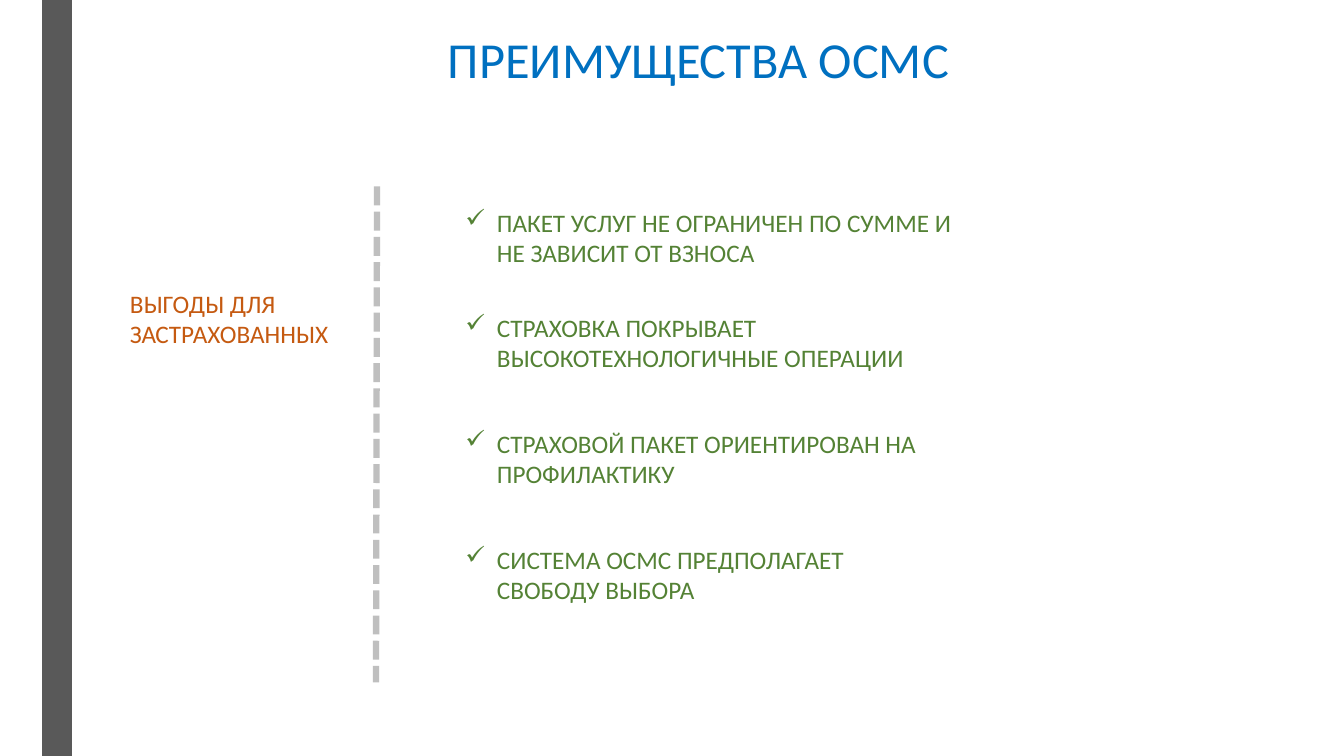
"""Build the slide on the benefits of compulsory health insurance."""
from dataclasses import dataclass

from lxml import etree
from pptx import Presentation
from pptx.dml.color import RGBColor
from pptx.enum.dml import MSO_LINE
from pptx.enum.shapes import MSO_CONNECTOR, MSO_SHAPE
from pptx.enum.text import MSO_ANCHOR, MSO_AUTO_SIZE, PP_ALIGN
from pptx.oxml.ns import qn
from pptx.util import Pt

RECTANGLE = MSO_SHAPE.RECTANGLE
STRAIGHT = MSO_CONNECTOR.STRAIGHT
DASH = MSO_LINE.SQUARE_DOT
TOP = MSO_ANCHOR.TOP
NO_FIT = MSO_AUTO_SIZE.NONE
LEFT, CENTER = PP_ALIGN.LEFT, PP_ALIGN.CENTER
TITLE_ONLY = 5

BENEFITS = [
    (144.7, "ПАКЕТ УСЛУГ НЕ ОГРАНИЧЕН ПО СУММЕ И НЕ ЗАВИСИТ ОТ ВЗНОСА"),
    (219.6, "СТРАХОВКА ПОКРЫВАЕТ ВЫСОКОТЕХНОЛОГИЧНЫЕ ОПЕРАЦИИ"),
    (302.4, "СТРАХОВОЙ ПАКЕТ ОРИЕНТИРОВАН НА ПРОФИЛАКТИКУ"),
    (385.2, "СИСТЕМА ОСМС ПРЕДПОЛАГАЕТ  СВОБОДУ ВЫБОРА"),
]


@dataclass(frozen=True)
class Theme:
    font: str = "Calibri"
    title_size: float = 36
    body_size: float = 18
    title: str = "0070C0"
    audience: str = "C55A11"
    benefit: str = "548235"
    stripe: str = "595959"
    divider: str = "BFBFBF"
    check: str = "✓"
    check_indent: float = 22.5


class Page:
    def __init__(self, deck, theme):
        self.theme = theme
        self.slide = deck.slides.add_slide(deck.slide_layouts[TITLE_ONLY])

    def set_text(self, shape, text, size, color, align=LEFT):
        frame = shape.text_frame
        frame.word_wrap = True
        frame.auto_size = NO_FIT
        frame.vertical_anchor = TOP
        para = frame.paragraphs[0]
        para.text = text
        para.alignment = align
        para.line_spacing = 1.0
        para.font.name = self.theme.font
        para.font.size = Pt(size)
        para.font.color.rgb = RGBColor.from_string(color)
        return para

    def title(self, left, top, width, height, text):
        shape = self.slide.shapes.title
        shape.left, shape.top = Pt(left), Pt(top)
        shape.width, shape.height = Pt(width), Pt(height)
        self.set_text(shape, text, self.theme.title_size, self.theme.title, CENTER)

    def text(self, left, top, width, height, text, color):
        box = self.slide.shapes.add_textbox(Pt(left), Pt(top), Pt(width), Pt(height))
        return self.set_text(box, text, self.theme.body_size, color)

    def checked(self, left, top, width, height, text):
        para = self.text(left, top, width, height, text, self.theme.benefit)
        properties = para._p.get_or_add_pPr()
        indent = Pt(self.theme.check_indent)
        properties.set("marL", str(indent))
        properties.set("indent", str(-indent))
        bullet = etree.Element(qn("a:buChar"), char=self.theme.check)
        properties.find(qn("a:lnSpc")).addnext(bullet)

    def stripe(self, left, top, width, height):
        shape = self.slide.shapes.add_shape(
            RECTANGLE, Pt(left), Pt(top), Pt(width), Pt(height))
        color = RGBColor.from_string(self.theme.stripe)
        shape.shadow.inherit = False
        shape.fill.solid()
        shape.fill.fore_color.rgb = color
        shape.line.color.rgb = color
        shape.line.width = Pt(1)

    def divider(self, start_x, start_y, end_x, end_y):
        line = self.slide.shapes.add_connector(
            STRAIGHT, Pt(start_x), Pt(start_y), Pt(end_x), Pt(end_y))
        line.line.color.rgb = RGBColor.from_string(self.theme.divider)
        line.line.width = Pt(4.5)
        line.line.dash_style = DASH
        etree.SubElement(line._element.spPr, qn("a:effectLst"))


def main():
    deck = Presentation()
    deck.slide_width, deck.slide_height = Pt(960), Pt(540)
    theme = Theme()
    page = Page(deck, theme)
    page.stripe(30.2, 0, 21, 540)
    page.title(85.7, 16.5, 826.5, 51, "ПРЕИМУЩЕСТВА ОСМС")
    page.divider(269.3, 133.2, 268.6, 487.4)
    page.text(85.7, 202.3, 172, 51, "ВЫГОДЫ ДЛЯ ЗАСТРАХОВАННЫХ", theme.audience)
    for top, benefit in BENEFITS:
        page.checked(325.4, top, 364.3, 51, benefit)
    deck.save("out.pptx")


if __name__ == "__main__":
    main()
